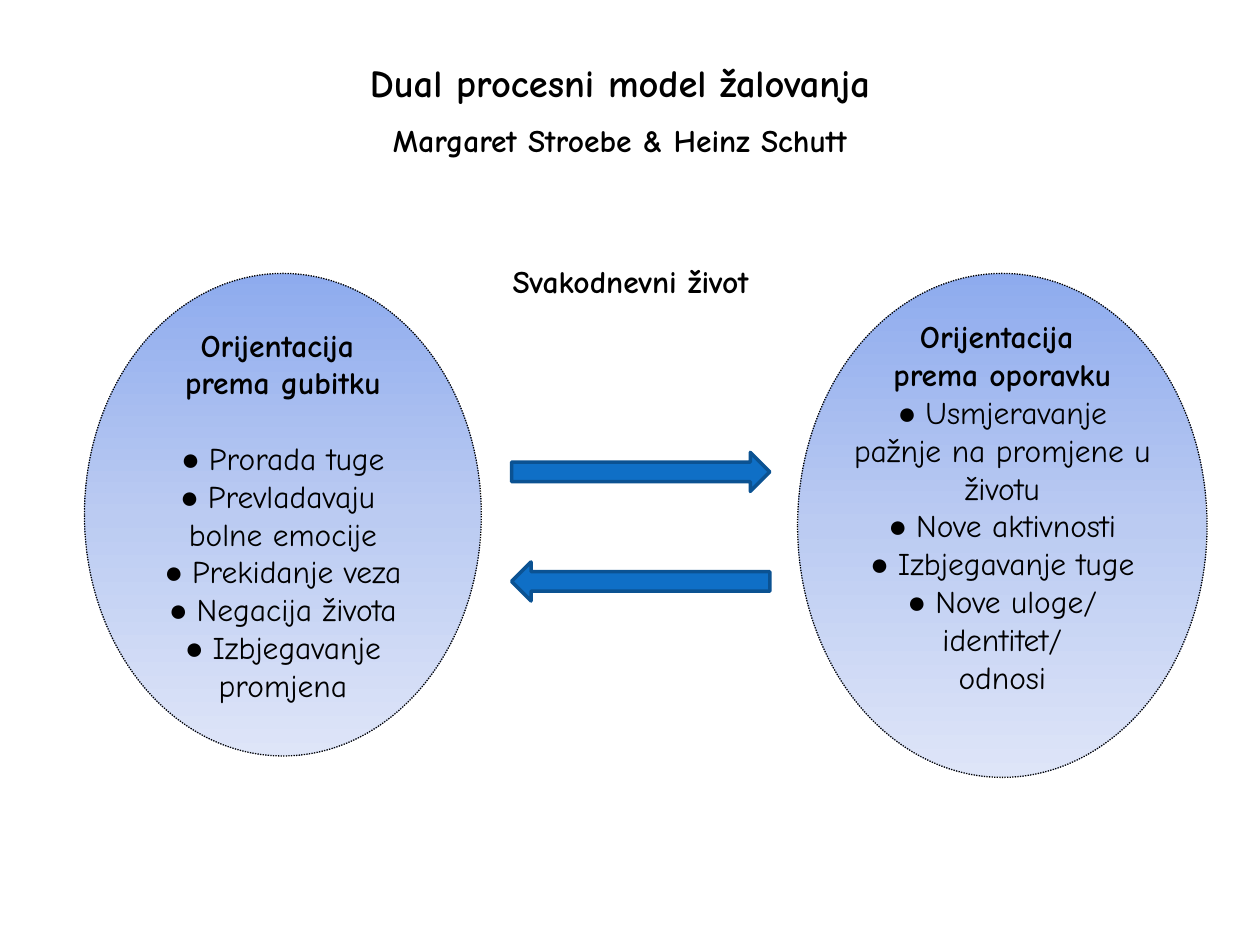
from copy import deepcopy

from pptx import Presentation
from pptx.dml.color import RGBColor
from pptx.enum.dml import MSO_LINE
from pptx.enum.shapes import MSO_SHAPE
from pptx.enum.text import MSO_ANCHOR, PP_ALIGN
from pptx.oxml.ns import qn
from pptx.util import Inches, Pt

BLACK = RGBColor(0x00, 0x00, 0x00)
WHITE = RGBColor(0xFF, 0xFF, 0xFF)
ARROW_FILL = RGBColor(0x0F, 0x6F, 0xC6)
ARROW_LINE = RGBColor(0x0B, 0x52, 0x92)
OVAL_STOPS = [
    (0, RGBColor(0x8E, 0xAB, 0xEE)),
    (0.5, RGBColor(0xBB, 0xCB, 0xF2)),
    (1, RGBColor(0xDE, 0xE5, 0xF8)),
]
TEXT_FONT = "Comic Neue"
BULLET_FONT = "Arial"
BULLET = "● "

LOSS_HEADING = ["Orijentacija ", "prema gubitku"]
LOSS_LINES = [
    "● Prorada tuge",
    "● Prevladavaju ",
    "bolne emocije",
    "● Prekidanje veza",
    "● Negacija života",
    "● Izbjegavanje",
    "promjena",
]
RECOVERY_HEADING = ["Orijentacija ", "prema oporavku"]
RECOVERY_LINES = [
    "● Usmjeravanje",
    "pažnje na promjene u",
    "životu",
    "● Nove aktivnosti",
    "● Izbjegavanje tuge",
    "● Nove uloge/",
    "identitet/",
    "odnosi",
]


def add_span(para, text, size=18, bold=False, font=TEXT_FONT):
    span = para.add_run()
    span.text = text
    span.font.name = font
    span.font.size = Pt(size)
    span.font.bold = bold
    span.font.color.rgb = BLACK


def add_para(frame, first):
    para = frame.paragraphs[0] if first else frame.add_paragraph()
    para.alignment = PP_ALIGN.CENTER
    return para


def add_caption(page, left, top, width, height, lines):
    box = page.shapes.add_textbox(
        Inches(left), Inches(top), Inches(width), Inches(height)
    )
    frame = box.text_frame
    frame.word_wrap = True
    for index, (text, size) in enumerate(lines):
        para = add_para(frame, index == 0)
        if index:
            para.space_before = Pt(9)
        add_span(para, text, size, bold=True)


def fill_gradient(shape):
    shape.fill.gradient()
    shape.fill.gradient_angle = 270
    stop_list = shape.fill._xPr.find(qn("a:gradFill")).find(qn("a:gsLst"))
    stop_list.insert(1, deepcopy(stop_list[0]))
    for stop, (position, color) in zip(shape.fill.gradient_stops, OVAL_STOPS):
        stop.position = position
        stop.color.rgb = color


def add_oval(page, left, width, height, heading, lines, gap=0, lift=0):
    oval = page.shapes.add_shape(
        MSO_SHAPE.OVAL, Inches(left), Inches(2.17), Inches(width), Inches(height)
    )
    oval.shadow.inherit = False
    fill_gradient(oval)
    oval.line.color.rgb = BLACK
    oval.line.width = Pt(0.75)
    oval.line.dash_style = MSO_LINE.ROUND_DOT
    frame = oval.text_frame
    frame.word_wrap = False
    frame.vertical_anchor = MSO_ANCHOR.MIDDLE
    frame.margin_bottom = Inches(0.05 + lift)
    for index, text in enumerate(heading):
        para = add_para(frame, index == 0)
        add_span(para, text, bold=True)
    para.space_after = Pt(gap)
    for text in lines:
        para = add_para(frame, False)
        if text.startswith(BULLET):
            add_span(para, BULLET, font=BULLET_FONT)
        add_span(para, text.removeprefix(BULLET))


def add_arrow(page, kind, top):
    arrow = page.shapes.add_shape(
        kind, Inches(4.06), Inches(top), Inches(2.05), Inches(0.31)
    )
    arrow.shadow.inherit = False
    arrow.fill.solid()
    arrow.fill.fore_color.rgb = ARROW_FILL
    arrow.line.color.rgb = ARROW_LINE
    arrow.line.width = Pt(2)


def main():
    deck = Presentation()
    deck.slide_width = Inches(10)
    deck.slide_height = Inches(7.5)
    page = deck.slides.add_slide(deck.slide_layouts[6])
    page.background.fill.solid()
    page.background.fill.fore_color.rgb = WHITE

    add_oval(page, 0.67, 3.15, 3.83, LOSS_HEADING, LOSS_LINES, gap=21.6)
    add_oval(page, 6.33, 3.25, 4, RECOVERY_HEADING, RECOVERY_LINES, lift=0.3)
    add_caption(page, 3.67, 2.03, 2.67, 0.4, [("Svakodnevni život", 18)])
    title_lines = [
        ("Dual procesni model žalovanja", 22),
        ("Margaret Stroebe & Heinz Schutt", 18),
    ]
    add_caption(page, 2.42, 0.42, 5, 1.38, title_lines)
    add_arrow(page, MSO_SHAPE.RIGHT_ARROW, 3.59)
    add_arrow(page, MSO_SHAPE.LEFT_ARROW, 4.46)

    deck.save("out.pptx")


if __name__ == "__main__":
    main()
